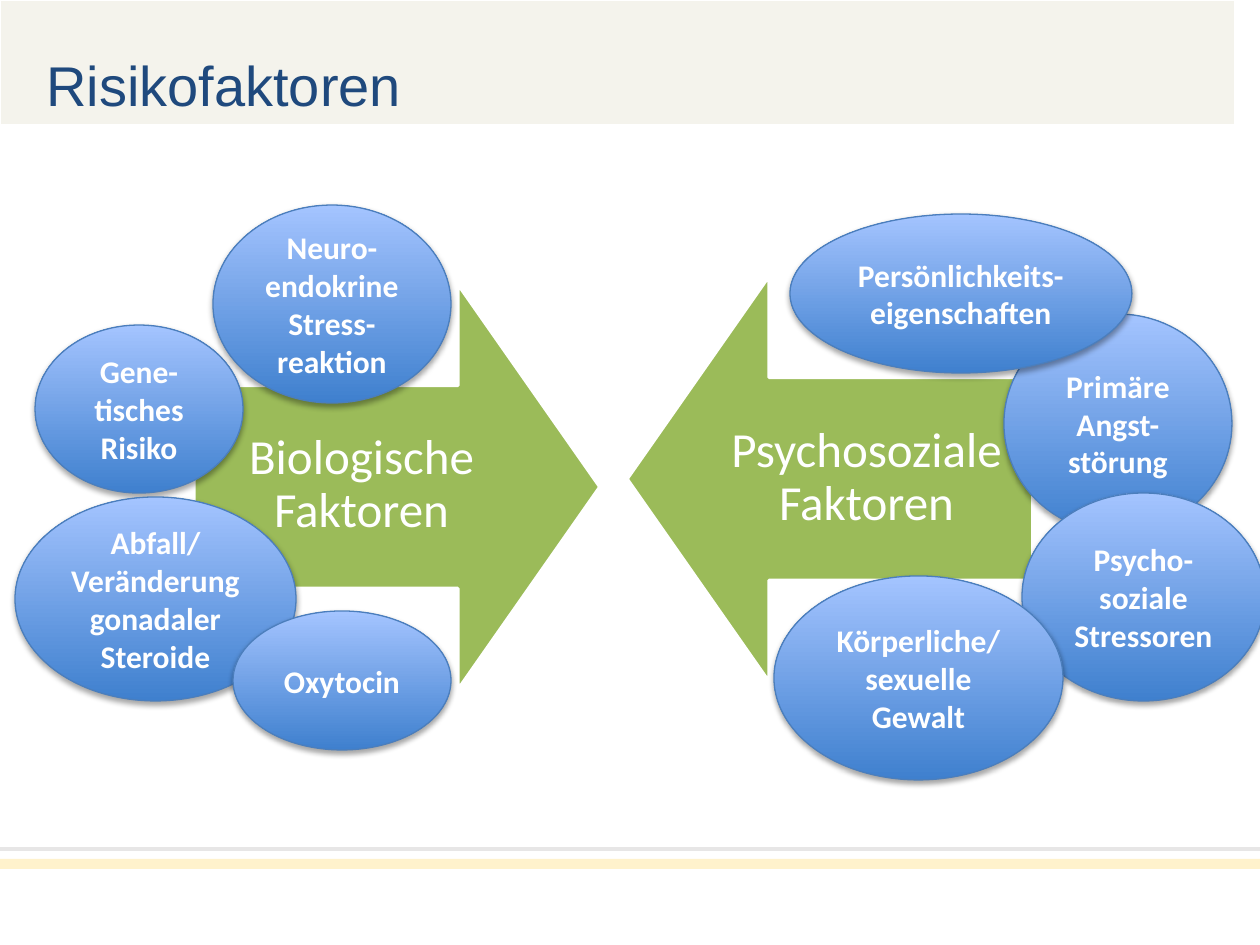
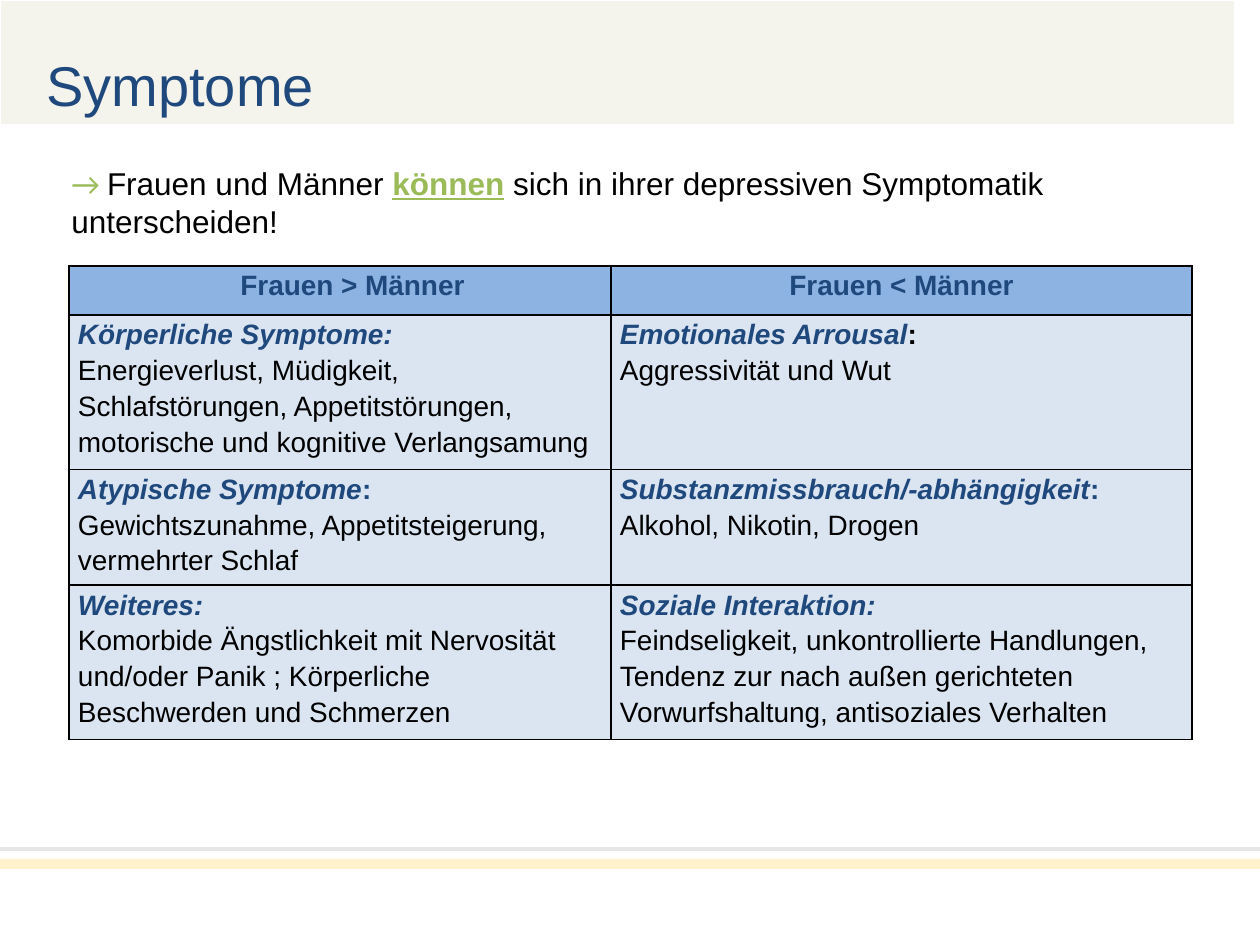
"""Build two slides on risk factors and symptoms of depression."""
from dataclasses import dataclass

from lxml import etree
from pptx import Presentation
from pptx import util as u
from pptx.dml.color import RGBColor
from pptx.enum import shapes, text
from pptx.oxml import ns

PX = 914400 / 126
WIDTH, HEIGHT = 1260, 945
NAVY, GREEN, WHITE, BLACK = "1F497D", "9BBB59", "FFFFFF", "000000"
BAND, RULE, STRIP = "F4F3EC", "E7E6E6", "FFF2CC"
OVAL_DARK, OVAL_LIGHT, OVAL_EDGE = "3F80CE", "A4C4FF", "4B7EBC"
HEADER_FILL, BODY_FILL = "8DB3E2", "DBE5F1"
CENTER = text.PP_ALIGN.CENTER


@dataclass(frozen=True)
class Box:
    left: int
    top: int
    width: int
    height: int

    def emu(self) -> list[u.Emu]:
        return [px(n) for n in (self.left, self.top, self.width, self.height)]


@dataclass(frozen=True)
class Piece:
    words: str
    color: str = BLACK
    size: int = 16
    font: str = "Arial"
    bold: bool = False
    italic: bool = False
    underline: bool = False


@dataclass(frozen=True)
class Direction:
    label: str
    preset: shapes.MSO_SHAPE
    arrow: Box
    caption: Box


@dataclass(frozen=True)
class Factor:
    lines: tuple[str, ...]
    box: Box


@dataclass(frozen=True)
class Symptom:
    heading: str
    colon: Piece
    detail: str


SYMPTOM_COLON = Piece(":", NAVY, bold=True, italic=True)
UPRIGHT_COLON = Piece(":", NAVY, bold=True)
BLACK_COLON = Piece(":", bold=True)

DIRECTIONS = [
    Direction("Biologische Faktoren", shapes.MSO_SHAPE.RIGHT_ARROW,
              Box(194, 284, 406, 406), Box(194, 384, 335, 203)),
    Direction("Psychosoziale Faktoren", shapes.MSO_SHAPE.LEFT_ARROW,
              Box(627, 276, 406, 406), Box(699, 377, 335, 203)),
]
FACTORS = [
    Factor(("Gene-tisches Risiko",), Box(35, 325, 208, 168)),
    Factor(("Abfall/", "Veränderung", "gonadaler Steroide"), Box(15, 497, 281, 204)),
    Factor(("Neuro-endokrine Stress-reaktion",), Box(213, 205, 238, 198)),
    Factor(("Oxytocin",), Box(233, 611, 218, 139)),
    Factor(("Primäre Angst-störung",), Box(1004, 314, 228, 219)),
    Factor(("Persönlichkeits-eigenschaften",), Box(790, 214, 342, 159)),
    Factor(("Psycho-soziale Stressoren",), Box(1022, 493, 243, 208)),
    Factor(("Körperliche/", "sexuelle Gewalt"), Box(774, 576, 289, 204)),
]
COMPARISONS = ["Frauen > Männer", "Frauen < Männer"]
SYMPTOMS = [
    (Symptom("Körperliche Symptome", SYMPTOM_COLON,
             "Energieverlust, Müdigkeit, Schlafstörungen, Appetitstörungen, "
             "motorische und kognitive Verlangsamung"),
     Symptom("Emotionales Arrousal", BLACK_COLON, "Aggressivität und Wut")),
    (Symptom("Atypische Symptome", UPRIGHT_COLON,
             "Gewichtszunahme, Appetitsteigerung, vermehrter Schlaf"),
     Symptom("Substanzmissbrauch/-abhängigkeit", UPRIGHT_COLON,
             "Alkohol, Nikotin, Drogen")),
    (Symptom("Weiteres", SYMPTOM_COLON,
             "Komorbide Ängstlichkeit mit Nervosität und/oder Panik ; "
             "Körperliche Beschwerden und Schmerzen"),
     Symptom("Soziale Interaktion", SYMPTOM_COLON,
             "Feindseligkeit, unkontrollierte Handlungen, Tendenz zur nach außen "
             "gerichteten Vorwurfshaltung, antisoziales Verhalten")),
]
COLUMN_WIDTHS = [542, 581]
ROW_HEIGHTS = [49, 151, 101, 151]


def px(length: int) -> u.Emu:
    """Turn a length in px into EMU."""
    return u.Emu(round(length * PX))


def rgb(color: str) -> RGBColor:
    """Turn a hex string into a colour."""
    return RGBColor.from_string(color)


def write(frame, paragraphs: list[list[Piece]], align=None, spacing=None) -> None:
    """Fill a text frame with paragraphs, run by run."""
    frame.word_wrap = True
    for index, pieces in enumerate(paragraphs):
        paragraph = frame.add_paragraph() if index else frame.paragraphs[0]
        paragraph.alignment = align
        paragraph.line_spacing = spacing
        for piece in pieces:
            run = paragraph.add_run()
            run.text = piece.words
            font = run.font
            font.name, font.size = piece.font, u.Pt(piece.size)
            font.bold, font.italic = piece.bold, piece.italic
            font.underline = piece.underline
            font.color.rgb = rgb(piece.color)


def add_text(slide, box: Box, paragraphs: list[list[Piece]], align=None, spacing=None):
    """Add a wrapping text box and return its frame."""
    frame = slide.shapes.add_textbox(*box.emu()).text_frame
    write(frame, paragraphs, align, spacing)
    return frame


def add_filled(slide, preset, box: Box, fill: str, edge: str = "", points: float = 0.75):
    """Add a flat preset shape with an optional outline."""
    shape = slide.shapes.add_shape(preset, *box.emu())
    shape.shadow.inherit = False
    shape.fill.solid()
    shape.fill.fore_color.rgb = rgb(fill)
    if edge:
        shape.line.color.rgb = rgb(edge)
        shape.line.width = u.Pt(points)
    else:
        shape.line.fill.background()
    return shape


def add_frame(deck, title: str):
    """Add a slide with the shared band, title and footer lines."""
    slide = deck.slides.add_slide(deck.slide_layouts[6])
    rectangle = shapes.MSO_SHAPE.RECTANGLE
    add_filled(slide, rectangle, Box(0, 0, 1235, 125), BAND, WHITE)
    rule = slide.shapes.add_connector(
        shapes.MSO_CONNECTOR.STRAIGHT, px(0), px(849), px(WIDTH), px(849))
    rule.line.color.rgb = rgb(RULE)
    rule.line.width = u.Pt(2)
    etree.SubElement(rule._element.spPr, ns.qn("a:effectLst"))
    add_filled(slide, rectangle, Box(0, 859, WIDTH, 10), STRIP)
    heading = add_text(slide, Box(34, 37, 932, 69), [[Piece(title, NAVY, 32)]])
    heading.margin_top = px(13)
    return slide


def add_direction(slide, direction: Direction) -> None:
    """Add a block arrow with its caption."""
    arrow = add_filled(slide, direction.preset, direction.arrow, GREEN, WHITE, 2)
    arrow.adjustments[0], arrow.adjustments[1] = 0.5, 0.35
    caption = add_text(slide, direction.caption,
                       [[Piece(direction.label, WHITE, 28, "Calibri")]], CENTER, 0.9)
    caption.vertical_anchor = text.MSO_ANCHOR.MIDDLE
    caption.margin_left = caption.margin_right = px(28)
    caption.margin_top = caption.margin_bottom = px(28)


def add_factor(slide, factor: Factor) -> None:
    """Add a shaded oval with a soft shadow."""
    oval = add_filled(slide, shapes.MSO_SHAPE.OVAL, factor.box, OVAL_DARK, OVAL_EDGE)
    oval.fill.gradient()
    oval.fill.gradient_angle = 90
    for stop, color in zip(oval.fill.gradient_stops, (OVAL_DARK, OVAL_LIGHT)):
        stop.color.rgb = rgb(color)
    effects = oval._element.spPr.find(ns.qn("a:effectLst"))
    shadow = etree.SubElement(effects, ns.qn("a:outerShdw"), blurRad="40000",
                              dist="23000", dir="5400000", rotWithShape="0")
    tone = etree.SubElement(shadow, ns.qn("a:srgbClr"), val=BLACK)
    etree.SubElement(tone, ns.qn("a:alpha"), val="35000")
    write(oval.text_frame,
          [[Piece(line, WHITE, 18, "Calibri", bold=True)] for line in factor.lines], CENTER)


def fill_cell(cell, paragraphs: list[list[Piece]], fill: str, align=None) -> None:
    """Give a table cell its borders, fill and text."""
    properties = cell._tc.get_or_add_tcPr()
    for side in ("lnL", "lnR", "lnT", "lnB"):
        border = etree.SubElement(properties, ns.qn(f"a:{side}"), w=str(u.Pt(1)))
        paint = etree.SubElement(border, ns.qn("a:solidFill"))
        etree.SubElement(paint, ns.qn("a:srgbClr"), val=BLACK)
    cell.fill.solid()
    cell.fill.fore_color.rgb = rgb(fill)
    cell.margin_left = cell.margin_right = px(9)
    cell.margin_top = cell.margin_bottom = 0
    write(cell.text_frame, paragraphs, align, 1.15)


def add_symptom_table(slide) -> None:
    """Add the table comparing symptoms of women and men."""
    box = Box(69, 266, sum(COLUMN_WIDTHS), sum(ROW_HEIGHTS))
    table = slide.shapes.add_table(len(ROW_HEIGHTS), len(COLUMN_WIDTHS), *box.emu()).table
    table.first_row = table.horz_banding = False
    for column, width in zip(table.columns, COLUMN_WIDTHS):
        column.width = px(width)
    for row, height in zip(table.rows, ROW_HEIGHTS):
        row.height = px(height)
    for column, comparison in enumerate(COMPARISONS):
        fill_cell(table.cell(0, column), [[Piece(comparison, NAVY, bold=True)]],
                  HEADER_FILL, CENTER)
    first_header = table.cell(0, 0).text_frame.paragraphs[0]
    first_header._p.get_or_add_pPr().set("marL", str(px(25)))
    for row, pair in enumerate(SYMPTOMS, 1):
        for column, symptom in enumerate(pair):
            heading = Piece(symptom.heading, NAVY, bold=True, italic=True)
            fill_cell(table.cell(row, column),
                      [[heading, symptom.colon], [Piece(symptom.detail)]], BODY_FILL)


def main() -> None:
    """Build and save the deck."""
    deck = Presentation()
    deck.slide_width, deck.slide_height = px(WIDTH), px(HEIGHT)

    risks = add_frame(deck, "Risikofaktoren")
    for direction in DIRECTIONS:
        add_direction(risks, direction)
    for factor in FACTORS:
        add_factor(risks, factor)

    symptoms = add_frame(deck, "Symptome")
    add_symptom_table(symptoms)
    add_text(symptoms, Box(59, 158, 1103, 89), [[
        Piece("→ ", GREEN, 18, "Calibri"),
        Piece("Frauen und Männer ", size=18),
        Piece("können", GREEN, 18, bold=True, underline=True),
        Piece(" sich in ihrer depressiven Symptomatik unterscheiden!", size=18),
    ]])
    deck.save("out.pptx")


if __name__ == "__main__":
    main()
